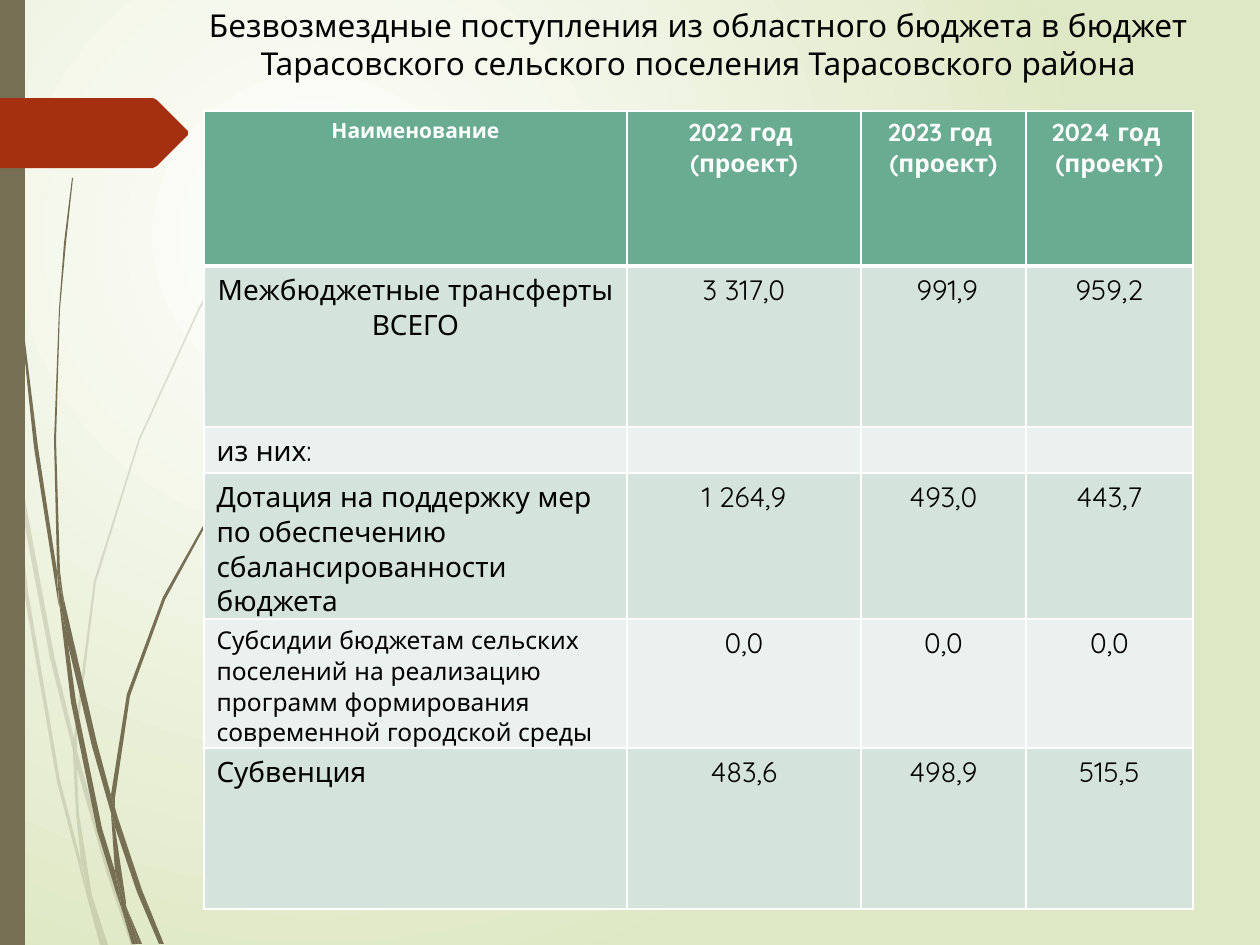
from dataclasses import dataclass

import lxml.etree
import pptx
import pptx.dml.color
import pptx.enum.shapes
import pptx.enum.text
import pptx.oxml.ns
import pptx.util

RGB = pptx.dml.color.RGBColor
ALIGN = pptx.enum.text.PP_ALIGN
qn = pptx.oxml.ns.qn

SCALE = 914400 / 126
FONT = "Quicksand"
WHITE = RGB(0xFF, 0xFF, 0xFF)
BLACK = RGB(0, 0, 0)
LIME = RGB(0xDF, 0xE8, 0xC4)
OLIVE = RGB(0x76, 0x6F, 0x54)
RUST = RGB(0xA5, 0x30, 0x10)
GREEN = RGB(0x6A, 0xAC, 0x91)
BANDS = (RGB(0xEB, 0xF1, 0xEE), RGB(0xD4, 0xE3, 0xDC))


@dataclass
class Grass:
    """A tuft of blades, each given by its corners, and its opacity."""
    alpha: int
    blades: list[list[tuple[int, int]]]


@dataclass
class Row:
    height: int
    cells: list[str]
    sizes: tuple[int, int] = (16, 16)  # first column, other columns
    center: bool = False
    foot: int = 6  # bottom margin


PALE = Grass(20, [
    [(10, 441), (8, 406), (0, 355), (0, 377), (9, 433)],
    [(50, 658), (74, 755), (74, 738), (54, 655), (13, 435), (15, 474)],
    [(81, 765), (77, 751), (77, 769), (107, 874), (131, 945), (136, 945), (111, 872)],
    [(105, 945), (108, 945), (92, 896)],
    [(81, 861), (60, 780), (28, 591), (15, 474), (10, 441), (24, 592), (57, 782),
     (81, 873), (88, 900), (87, 891)],
    [(73, 755), (76, 814), (81, 861), (84, 872), (92, 896), (91, 890), (79, 814),
     (77, 769), (77, 766)],
    [(77, 736), (96, 582), (140, 440), (200, 309), (236, 249), (253, 221), (273, 194),
     (273, 193), (253, 220), (234, 248), (199, 307), (139, 438), (94, 581), (74, 736),
     (74, 738), (77, 751)],
    [(88, 900), (100, 945), (103, 945)],
    [(77, 766), (77, 769), (77, 751), (74, 738), (73, 755)],
    [(84, 872), (82, 861), (87, 891), (88, 900), (103, 945), (105, 945), (92, 896)],
])
DARK = Grass(100, [
    [(6, 139), (18, 294), (34, 447), (58, 601), (59, 606), (57, 576), (57, 571),
     (38, 447), (19, 292), (8, 137), (5, 60), (4, 0), (3, 0), (4, 60)],
    [(92, 746), (111, 813), (111, 798), (111, 795), (97, 743), (63, 595), (66, 636)],
    [(118, 818), (115, 808), (115, 827), (137, 892), (159, 944), (164, 944), (142, 890)],
    [(115, 871), (102, 828), (76, 701), (67, 636), (59, 601), (71, 702), (97, 830),
     (116, 892), (122, 910), (121, 903)],
    [(63, 595), (60, 571), (56, 440), (60, 309), (66, 243), (73, 178), (72, 178),
     (64, 243), (59, 309), (54, 440), (57, 566), (62, 595)],
    [(139, 944), (142, 944), (126, 906)],
    [(59, 601), (67, 636), (63, 595), (62, 595), (57, 566), (57, 571)],
    [(115, 798), (130, 696), (165, 600), (213, 512), (241, 471), (256, 452), (272, 433),
     (271, 433), (256, 451), (241, 470), (212, 510), (163, 597), (127, 694), (111, 795),
     (115, 808)],
    [(122, 910), (132, 944), (136, 944)],
    [(111, 813), (115, 871), (121, 890), (126, 906), (126, 902), (115, 827), (113, 820)],
    [(111, 813), (113, 820), (115, 827), (115, 808), (111, 795), (111, 798)],
    [(121, 890), (115, 871), (121, 903), (122, 910), (136, 944), (139, 944), (126, 906)],
])
ARROW = [(0, 98), (153, 98), (157, 100), (188, 131), (188, 135),
         (157, 166), (153, 168), (0, 168)]
COLS = [423, 234, 165, 167]
ROWS = [
    Row(155, ["Наименование"] + [f"{year} год \v(проект)" for year in (2022, 2023, 2024)],
        (12, 14), True),
    Row(161, ["Межбюджетные трансферты ВСЕГО", "3 317,0", " 991,9", "959,2"], center=True),
    Row(43, ["из них:", "", "", ""], foot=5),
    Row(135, ["Дотация на поддержку мер по обеспечению сбалансированности бюджета",
              "1 264,9", "493,0", "443,7"], foot=0),
    Row(74, ["Субсидии бюджетам сельских поселений на реализацию программ "
             "формирования современной городской среды", "0,0", "0,0", "0,0"],
        (14, 16), foot=0),
    Row(161, ["Субвенция", "483,6", "498,9", "515,5"]),
]


def px(value: float) -> int:
    return round(value * SCALE)


def paint(shape, color: RGB, alpha: int = 100) -> None:
    shape.shadow.inherit = False
    shape.fill.solid()
    shape.fill.fore_color.rgb = color
    shape.line.fill.background()
    if alpha < 100:
        tint = shape.element.spPr.find(".//" + qn("a:srgbClr"))
        lxml.etree.SubElement(tint, qn("a:alpha"), val=str(alpha * 1000))


def outline(slide, points: list[tuple[int, int]], color: RGB, alpha: int = 100) -> None:
    first, *rest = [(px(x), px(y)) for x, y in points]
    pen = slide.shapes.build_freeform(*first)
    pen.add_line_segments(rest)
    paint(pen.convert_to_shape(), color, alpha)


def style(para, size: int, color: RGB, bold: bool, align) -> None:
    para.alignment = align
    for run in para.runs:
        run.font.name = FONT
        run.font.size = pptx.util.Pt(size)
        run.font.bold = bold
        run.font.color.rgb = color


def edge(cell, side: str, width: int) -> None:
    props = cell._tc.get_or_add_tcPr()
    line = lxml.etree.SubElement(props, qn(f"a:ln{side}"), w=str(pptx.util.Pt(width)))
    fill = lxml.etree.SubElement(line, qn("a:solidFill"))
    lxml.etree.SubElement(fill, qn("a:srgbClr"), val=str(WHITE))


def draw_table(slide) -> None:
    frame = slide.shapes.add_table(len(ROWS), len(COLS), px(204), px(111), px(989), px(803))
    table = frame.table
    for col, width in zip(table.columns, COLS):
        col.width = px(width)
    for i, row in enumerate(ROWS):
        table.rows[i].height = px(row.height)
        head = i == 0
        for j, text in enumerate(row.cells):
            cell = table.cell(i, j)
            size = row.sizes[j > 0]
            cell.margin_bottom = px(row.foot)
            para = cell.text_frame.paragraphs[0]
            para.text = text
            align = ALIGN.CENTER if row.center or j else ALIGN.LEFT
            style(para, size, WHITE if head else BLACK, head, align)
            if not text:
                lxml.etree.SubElement(para._p, qn("a:endParaRPr"), sz=str(size * 100))
            if head:
                for side, width in zip("LRTB", (1, 1, 1, 3)):
                    edge(cell, side, width)
            cell.fill.solid()
            cell.fill.fore_color.rgb = GREEN if head else BANDS[i % 2]


def draw_ground(slide) -> None:
    fill = slide.background.fill
    fill.gradient()
    for stop, color, place in zip(fill.gradient_stops, (WHITE, LIME), (0, 1)):
        stop.color.rgb = color
        stop.position = place
    grad = slide.element.find(".//" + qn("a:gradFill"))
    grad.remove(grad.find(qn("a:lin")))
    round_fill = lxml.etree.SubElement(grad, qn("a:path"), path="circle")
    lxml.etree.SubElement(round_fill, qn("a:fillToRect"),
                          l="50000", t="50000", r="100000", b="100000")


def draw_title(slide) -> None:
    title = slide.shapes.title
    title.left, title.top, title.width, title.height = px(137), 0, px(1123), px(127)
    frame = title.text_frame
    frame.text = ("Безвозмездные поступления из областного бюджета в бюджет "
                  "Тарасовского сельского поселения Тарасовского района")
    frame.word_wrap = True
    frame.auto_size = pptx.enum.text.MSO_AUTO_SIZE.NONE
    frame.vertical_anchor = pptx.enum.text.MSO_ANCHOR.TOP
    style(frame.paragraphs[0], 18, BLACK, False, ALIGN.CENTER)


def main() -> None:
    deck = pptx.Presentation()
    deck.slide_width, deck.slide_height = px(1260), px(945)
    slide = deck.slides.add_slide(deck.slide_layouts[5])
    draw_ground(slide)
    # Grass, side bar and arrow
    for tuft in (PALE, DARK):
        for blade in tuft.blades:
            outline(slide, blade, OLIVE, tuft.alpha)
    bar = slide.shapes.add_shape(pptx.enum.shapes.MSO_SHAPE.RECTANGLE, 0, 0, px(25), px(945))
    paint(bar, OLIVE)
    outline(slide, ARROW, RUST)
    # Title and budget table
    draw_title(slide)
    draw_table(slide)
    deck.save("out.pptx")


if __name__ == "__main__":
    main()
